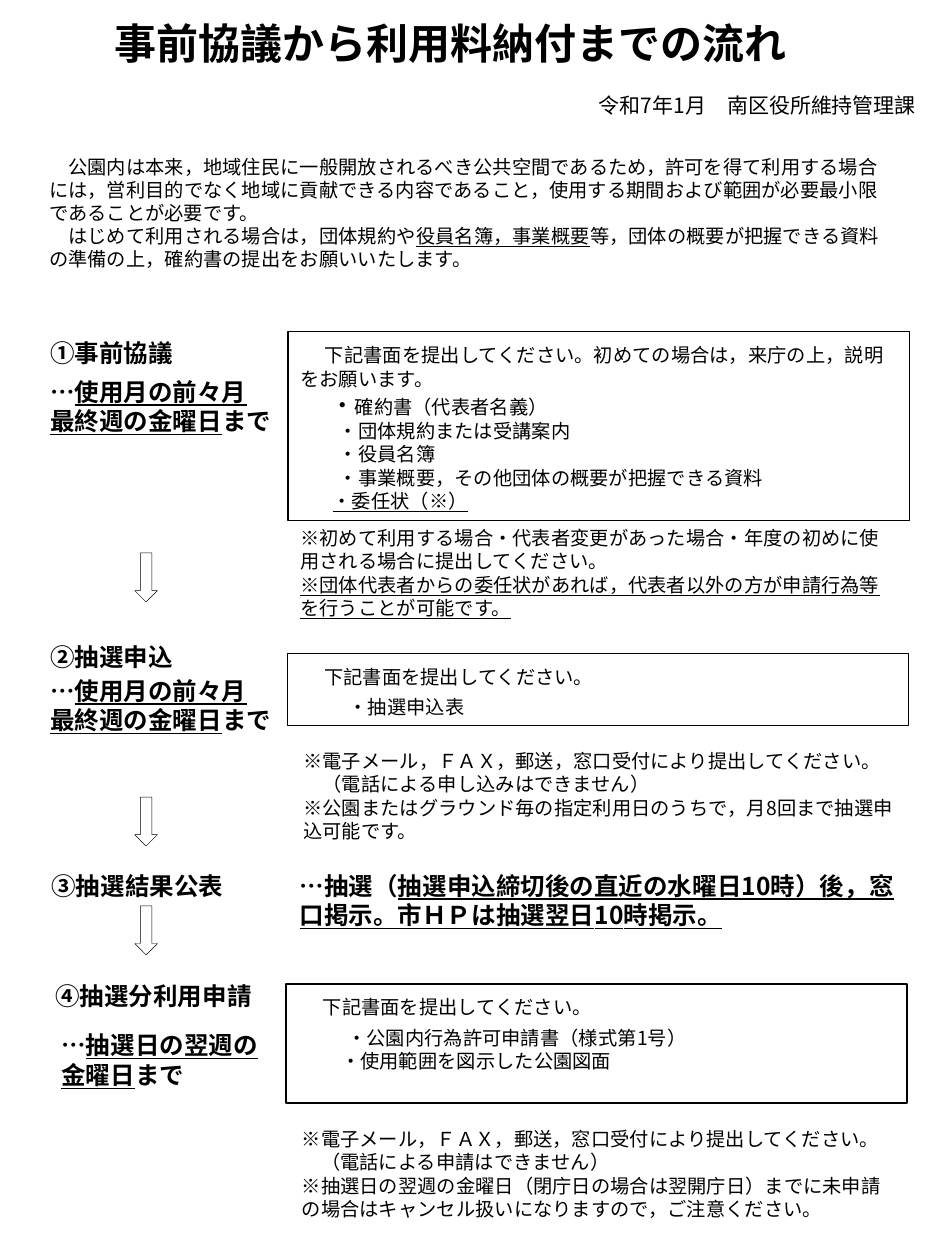
import pptx
import pptx.util
import pptx.dml.color
import pptx.enum.shapes
import pptx.enum.text
import pptx.oxml.ns
from dataclasses import dataclass
from lxml import etree

Pt = pptx.util.Pt
SHAPES = pptx.enum.shapes.MSO_SHAPE
ALIGN = pptx.enum.text.PP_ALIGN
ANCHOR = pptx.enum.text.MSO_ANCHOR


def color(hex_string):
    return pptx.dml.color.RGBColor.from_string(hex_string)


@dataclass
class Line:
    """One paragraph; underscores in text switch underlining on and off."""
    text: str
    lead: str = ""
    indent: float = 0
    before: float = 0
    size: float = 11
    bold: bool = False
    align: object = ALIGN.LEFT


class FlowSlide:
    font = "Noto Sans CJK JP"
    ink = "000000"
    lead_size = 14

    def __init__(self, slide):
        self.slide = slide

    def add_run(self, paragraph, text, size, bold=False, underline=False):
        run = paragraph.add_run()
        run.text = text
        font = run.font
        font.name, font.size, font.bold = self.font, Pt(size), bold
        font.underline = underline
        font.color.rgb = color(self.ink)
        # East Asian typeface
        latin = run._r.rPr.find(pptx.oxml.ns.qn("a:latin"))
        east_asian = etree.Element(pptx.oxml.ns.qn("a:ea"), typeface=self.font)
        latin.addnext(east_asian)

    def fill_text(self, shape, lines, anchor=ANCHOR.TOP):
        frame = shape.text_frame
        frame.word_wrap = True
        frame.vertical_anchor = anchor
        for number, line in enumerate(lines):
            paragraph = frame.add_paragraph() if number else frame.paragraphs[0]
            paragraph.alignment = line.align
            paragraph.space_before = Pt(line.before)
            if line.indent:
                paragraph._p.get_or_add_pPr().set("indent", str(Pt(line.indent)))
            if line.lead:
                self.add_run(paragraph, line.lead, self.lead_size)
            for part, text in enumerate(line.text.split("_")):
                if text:
                    self.add_run(paragraph, text, line.size, line.bold, part % 2 == 1)

    def text(self, left, top, width, height, lines, anchor=ANCHOR.TOP):
        shape = self.slide.shapes.add_textbox(Pt(left), Pt(top), Pt(width), Pt(height))
        self.fill_text(shape, lines, anchor)

    def heading(self, left, top, width, height, *texts):
        self.text(left, top, width, height,
                  [Line(text, size=14, bold=True) for text in texts])

    def outline(self, preset, left, top, width, height, weight):
        shape = self.slide.shapes.add_shape(preset, Pt(left), Pt(top), Pt(width), Pt(height))
        shape.shadow.inherit = False
        shape.fill.background()
        shape.line.color.rgb = color(self.ink)
        shape.line.width = Pt(weight)
        return shape

    def box(self, left, top, height, lines):
        shape = self.outline(SHAPES.RECTANGLE, left, top, 355, height, 0.75)
        self.fill_text(shape, lines)

    def arrow(self, top):
        self.outline(SHAPES.DOWN_ARROW, 77, top, 13, 28, 0.25)


def main():
    presentation = pptx.Presentation()
    presentation.slide_width, presentation.slide_height = Pt(540), Pt(720)
    flow = FlowSlide(presentation.slides.add_slide(presentation.slide_layouts[6]))
    deadline = ("…_使用月の前々月_", "_最終週の金曜日_まで")
    submit = "下記書面を提出してください。"
    by_any_means = Line("※電子メール，ＦＡＸ，郵送，窓口受付により提出してください。")

    # Title and introduction
    flow.text(8.6, 5.8, 522, 65.5, [
        Line("事前協議から利用料納付までの流れ　", size=24, bold=True, align=ALIGN.CENTER),
        Line("令和7年1月　南区役所維持管理課", size=12, before=14.5, align=ALIGN.RIGHT),
    ], ANCHOR.MIDDLE)
    flow.text(21, 85, 499, 87, [
        Line("　公園内は本来，地域住民に一般開放されるべき公共空間であるため，許可を得て利用する"
             "場合には，営利目的でなく地域に貢献できる内容であること，使用する期間および範囲が"
             "必要最小限であることが必要です。"),
        Line("　はじめて利用される場合は，団体規約や_役員名簿，事業概要_等，団体の概要が"
             "把握できる資料の準備の上，確約書の提出をお願いいたします。"),
    ])

    # Step 1: prior consultation
    flow.heading(21.6, 189.4, 145, 24.5, "①事前協議")
    flow.heading(21.6, 211.7, 145, 41, *deadline)
    flow.box(164.6, 189.4, 108, [
        Line(submit + "初めての場合は，来庁の上，説明をお願います。", lead="　"),
        Line("確約書（代表者名義）", lead="・", indent=17),
        Line("・団体規約または受講案内", indent=22),
        Line("・役員名簿", indent=22),
        Line("・事業概要，その他団体の概要が把握できる資料", indent=22),
        Line("_・委任状（※）_", indent=18.4),
    ])
    flow.text(164.6, 297.4, 355, 60.5, [
        Line("※初めて利用する場合・代表者変更があった場合・年度の初めに使用される場合に"
             "提出してください。"),
        Line("_※団体代表者からの委任状があれば，代表者以外の方が申請行為等を行うことが可能です。_"),
    ])
    flow.arrow(316)

    # Step 2: lottery application
    flow.heading(21.6, 363.6, 145, 24.5, "②抽選申込")
    flow.heading(21.6, 382.5, 145, 58, *deadline)
    flow.box(164.2, 373.6, 41, [
        Line(submit, lead="　"),
        Line("・抽選申込表", indent=28, before=3.5),
    ])
    flow.text(166.3, 424.8, 355, 60.5, [
        by_any_means,
        Line("　（電話による申し込みはできません）"),
        Line("※公園またはグラウンド毎の指定利用日のうちで，月8回まで抽選申込可能です。"),
    ])
    flow.arrow(455.5)

    # Step 3: lottery results
    flow.heading(22.3, 494, 145, 41, "③抽選結果公表")
    flow.heading(164.2, 494, 354, 41,
                 "…抽選（_抽選申込締切後の直近の水曜日10時）後，窓口掲示。市ＨＰは抽選翌日10時掲示。_")
    flow.arrow(517.7)

    # Step 4: application for the allotted use
    flow.heading(24.5, 557.3, 145, 24.5, "④抽選分利用申請")
    flow.heading(28, 585.3, 145, 41, "…_抽選日の翌週の_", "_金曜日_まで")
    flow.box(163.4, 562.3, 68, [
        Line(submit, lead="　"),
        Line("・公園内行為許可申請書（様式第1号）", indent=28, before=3.5),
        Line("・使用範囲を図示した公園図面", indent=24.5),
    ])
    flow.text(165.4, 640.8, 355, 60.5, [
        by_any_means,
        Line("　（電話による申請はできません）"),
        Line("※抽選日の翌週の金曜日（閉庁日の場合は翌開庁日）までに未申請の場合は"
             "キャンセル扱いになりますので，ご注意ください。"),
    ])

    presentation.save("out.pptx")


if __name__ == "__main__":
    main()
